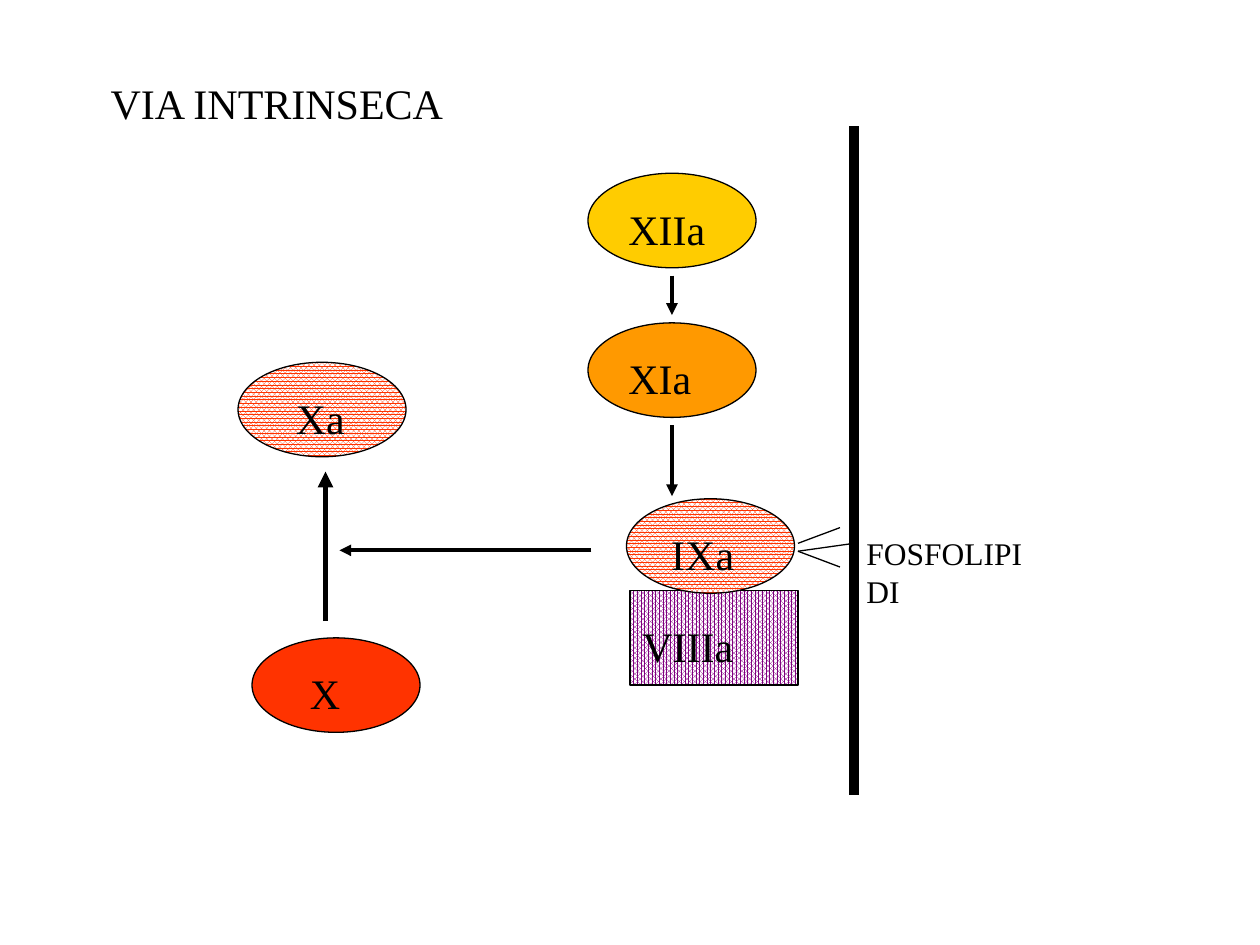
from lxml.etree import SubElement
from pptx import Presentation
from pptx.dml.color import RGBColor
from pptx.enum.dml import MSO_PATTERN
from pptx.enum.shapes import MSO_CONNECTOR, MSO_SHAPE
from pptx.enum.text import MSO_ANCHOR, MSO_AUTO_SIZE, PP_ALIGN
from pptx.oxml.ns import qn
from pptx.util import Pt


def rgb(code):
    return RGBColor.from_string(code)


class Board:
    """Draws styled titles, labels, nodes and lines on one slide."""

    font, ink, paper = "Times New Roman", "000000", "FFFFFF"
    wide, high, drop = 96, 54, 13.5

    def __init__(self, slide):
        self.slide = slide

    def fit(self, box, place, text, size):
        box.left, box.top, box.width, box.height = map(Pt, place)
        frame = box.text_frame
        frame.text = text
        frame.word_wrap = True
        frame.auto_size = MSO_AUTO_SIZE.SHAPE_TO_FIT_TEXT
        frame.vertical_anchor = MSO_ANCHOR.TOP
        para = frame.paragraphs[0]
        para.alignment = PP_ALIGN.LEFT
        font = para.runs[0].font
        font.name, font.size = self.font, Pt(size)
        font.color.rgb = rgb(self.ink)

    def title(self, text, place):
        self.fit(self.slide.shapes.title, place, text, 24)

    def label(self, text, place, size=24):
        box = self.slide.shapes.add_textbox(*map(Pt, place))
        self.fit(box, place, text, size)

    def node(self, left, top, color, kind=MSO_SHAPE.OVAL, dotted=False):
        area = map(Pt, (left, top, self.wide, self.high))
        shape = self.slide.shapes.add_shape(kind, *area)
        shape.shadow.inherit = False
        fill = shape.fill
        if dotted:
            fill.patterned()
            fill.pattern = MSO_PATTERN.PERCENT_80
            fill.back_color.rgb = rgb(self.paper)
        else:
            fill.solid()
        fill.fore_color.rgb = rgb(color)
        shape.line.color.rgb = rgb(self.ink)
        shape.line.width = Pt(0.75)

    def line(self, start, end, width=0.75, arrow=False):
        link = self.slide.shapes.add_connector(
            MSO_CONNECTOR.STRAIGHT, *map(Pt, start + end))
        link.line.color.rgb = rgb(self.ink)
        link.line.width = Pt(width)
        props = link._element.spPr
        if arrow:
            SubElement(props.get_or_add_ln(), qn("a:tailEnd"), type="triangle")
        SubElement(props, qn("a:effectLst"))


def main():
    deck = Presentation()
    deck.slide_width, deck.slide_height = Pt(720), Pt(540)
    board = Board(deck.slides.add_slide(deck.slide_layouts[5]))
    board.title("VIA INTRINSECA", (56, 40.5, 274, 27))

    oval, rect = MSO_SHAPE.OVAL, MSO_SHAPE.RECTANGLE
    nodes = [
        ("VIIIa", 360, 337.5, "800080", rect, True, 0, 88),
        ("IXa", 358, 285, "FF3300", oval, True, 18.5, 67),
        ("Xa", 136, 207, "FF3300", oval, True, 26, 57),
        ("X", 144, 364.5, "FF3300", oval, False, 26, 42),
        ("XIa", 336, 184.5, "FF9900", oval, False, 16, 68),
        ("XIIa", 336, 99, "FFCC00", oval, False, 16, 78),
    ]
    for _, left, top, color, kind, dotted, _, _ in nodes:
        board.node(left, top, color, kind, dotted)
    for text, left, top, _, _, _, shift, width in nodes:
        board.label(text, (left + shift, top + board.drop, width, 27))

    for start, end in [((456, 315), (480, 324)),
                       ((456, 310.5), (480, 301.5)),
                       ((456, 315), (488, 310.5))]:
        board.line(start, end)
    board.label("FOSFOLIPIDI", (488, 301.5, 115, 17), 18)
    board.line((488, 72), (488, 454.5), 6)

    for start, end, width in [((186, 355), (186, 269.5), 3),
                              ((338, 314.5), (194, 314.5), 2.25),
                              ((384, 157.5), (384, 180), 2.25),
                              ((384, 243), (384, 283.5), 2.25)]:
        board.line(start, end, width, arrow=True)

    deck.save("out.pptx")


if __name__ == "__main__":
    main()
